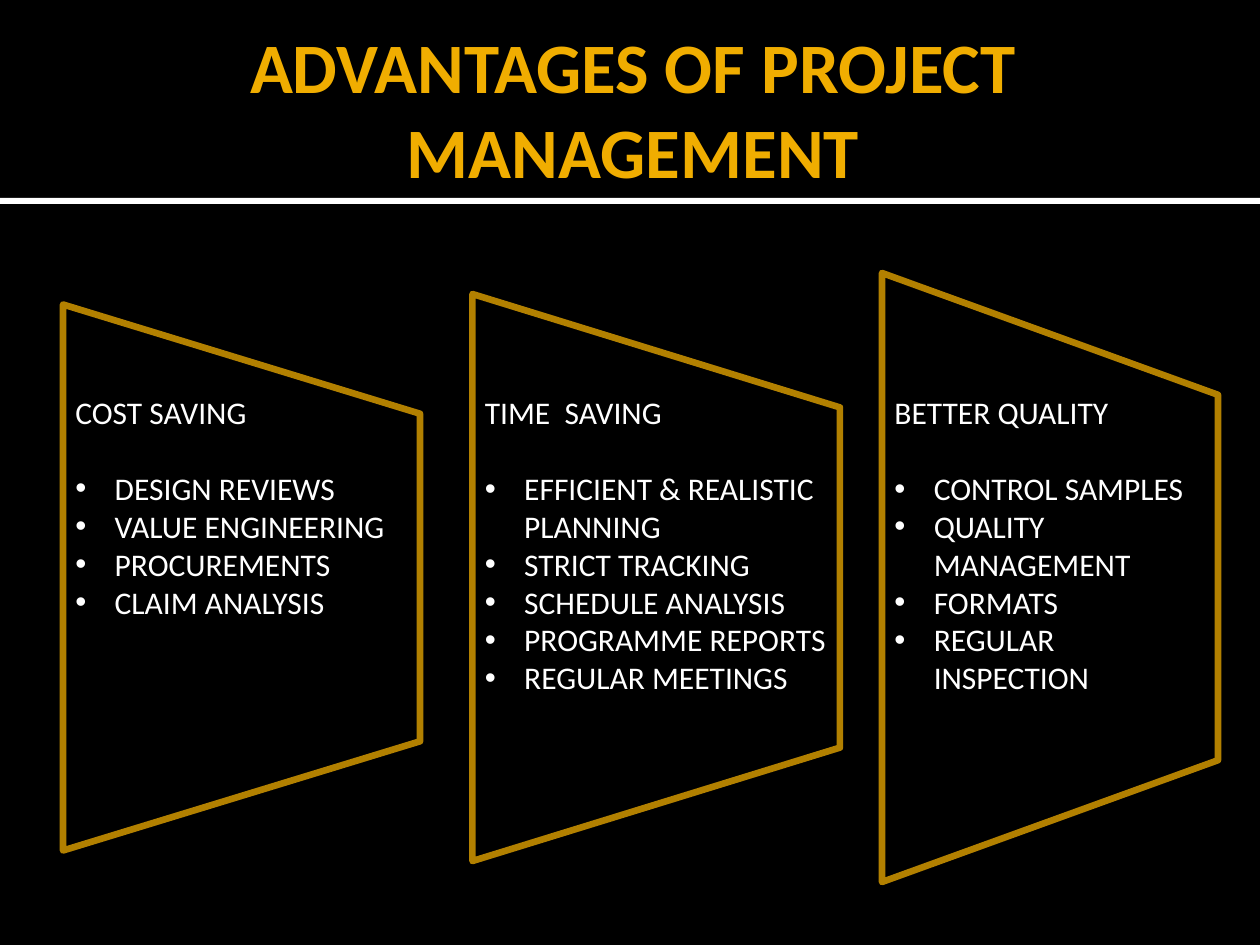
import dataclasses

import lxml.etree
import pptx
import pptx.dml.color
import pptx.enum.shapes
import pptx.enum.text
import pptx.oxml.ns
import pptx.util

Pt = pptx.util.Pt
Color = pptx.dml.color.RGBColor.from_string
Shape = pptx.enum.shapes.MSO_SHAPE
qn = pptx.oxml.ns.qn


@dataclasses.dataclass(frozen=True)
class Theme:
    font: str = "Calibri"
    background: str = "000000"
    text: str = "FFFFFF"
    title: str = "F0AD00"
    outline: str = "B28000"
    title_size: float = 40.5
    body_size: float = 18
    outline_width: float = 3.78


@dataclasses.dataclass(frozen=True)
class Box:
    left: float
    top: float
    width: float
    height: float

    def lengths(self):
        return [Pt(value) for value in dataclasses.astuple(self)]


THEME = Theme()
PANEL_LEFT, PANEL_STEP, PANEL_MIDDLE = 36, 234, 330
TEXT_TOP = 221
BULLET_INDENT = 22.5
HEADING_GAP = 22

PANELS = [
    ("COST SAVING", 204, 312, 246,
     ["DESIGN REVIEWS", "VALUE ENGINEERING", "PROCUREMENTS", "CLAIM ANALYSIS"]),
    ("TIME  SAVING", 210, 324, 222,
     ["EFFICIENT & REALISTIC PLANNING", "STRICT TRACKING", "SCHEDULE ANALYSIS",
      "PROGRAMME REPORTS", "REGULAR MEETINGS"]),
    ("BETTER QUALITY", 192, 348, 198,
     ["CONTROL SAMPLES", "QUALITY MANAGEMENT", "FORMATS", "REGULAR INSPECTION"]),
]


def write_text(para, text, *, size, color, bold=False, bullet=False, after=0,
               align=pptx.enum.text.PP_ALIGN.LEFT):
    para.alignment = align
    para.space_before = Pt(0)
    para.space_after = Pt(after)
    span = para.add_run()
    span.text = text
    span.font.name = THEME.font
    span.font.size = Pt(size)
    span.font.bold = bold
    span.font.color.rgb = Color(color)
    if bullet:
        properties = para._p.get_or_add_pPr()
        properties.set("marL", str(Pt(BULLET_INDENT)))
        properties.set("indent", str(-Pt(BULLET_INDENT)))
        lxml.etree.SubElement(properties, qn("a:buFont"), typeface="Arial")
        lxml.etree.SubElement(properties, qn("a:buChar"), char="•")


def add_filled_shape(slide, kind, box, fill):
    shape = slide.shapes.add_shape(kind, *box.lengths())
    shape.shadow.inherit = False
    shape.fill.solid()
    shape.fill.fore_color.rgb = Color(fill)
    shape.line.fill.background()
    return shape


def add_header(slide, box, rule_height):
    title = slide.shapes.title
    band = add_filled_shape(slide, Shape.RECTANGLE, box, THEME.background)
    rule_box = Box(box.left, box.top + box.height, box.width, rule_height)
    rule = add_filled_shape(slide, Shape.RECTANGLE, rule_box, THEME.text)
    for shape in (rule, band):
        title.element.addprevious(shape.element)

    title_box = Box(box.left + 36, box.top + 12.24, box.width - 72, 98.64)
    title.left, title.top, title.width, title.height = title_box.lengths()
    frame = title.text_frame
    frame.word_wrap = True
    frame.auto_size = pptx.enum.text.MSO_AUTO_SIZE.NONE
    frame.vertical_anchor = pptx.enum.text.MSO_ANCHOR.MIDDLE
    frame.margin_left = Pt(7.2)
    frame.margin_right = frame.margin_top = frame.margin_bottom = Pt(3.6)
    write_text(frame.paragraphs[0], "ADVANTAGES OF PROJECT MANAGEMENT",
               size=THEME.title_size, color=THEME.title, bold=True,
               align=pptx.enum.text.PP_ALIGN.CENTER)


def add_panel(slide, box, heading, items, text_width):
    turned = Box(box.left + (box.width - box.height) / 2,
                 box.top + (box.height - box.width) / 2, box.height, box.width)
    outline = add_filled_shape(slide, Shape.FLOWCHART_MANUAL_OPERATION, turned,
                               THEME.background)
    outline.rotation = 270
    outline.line.color.rgb = Color(THEME.outline)
    outline.line.width = Pt(THEME.outline_width)
    lxml.etree.SubElement(outline.line._get_or_add_ln(), qn("a:round"))

    text_height = 138 if len(items) == 4 and text_width > box.width + 12 else 181
    text_box = Box(box.left, TEXT_TOP, text_width, text_height)
    frame = slide.shapes.add_textbox(*text_box.lengths()).text_frame
    frame.word_wrap = True
    frame.auto_size = pptx.enum.text.MSO_AUTO_SIZE.SHAPE_TO_FIT_TEXT
    style = {"size": THEME.body_size, "color": THEME.text}
    write_text(frame.paragraphs[0], heading, after=HEADING_GAP, **style)
    for item in items:
        write_text(frame.add_paragraph(), item, bullet=True, **style)


def main():
    deck = pptx.Presentation()
    deck.slide_width, deck.slide_height = Pt(720), Pt(540)
    slide = deck.slides.add_slide(deck.slide_layouts.get_by_name("Title Only"))
    slide.background.fill.solid()
    slide.background.fill.fore_color.rgb = Color(THEME.background)
    add_header(slide, Box(0, 0, 720, 113), 3.6)
    for index, (heading, width, height, text_width, items) in enumerate(PANELS):
        box = Box(PANEL_LEFT + index * PANEL_STEP, PANEL_MIDDLE - height / 2,
                  width, height)
        add_panel(slide, box, heading, items, text_width)
    deck.save("out.pptx")


if __name__ == "__main__":
    main()
